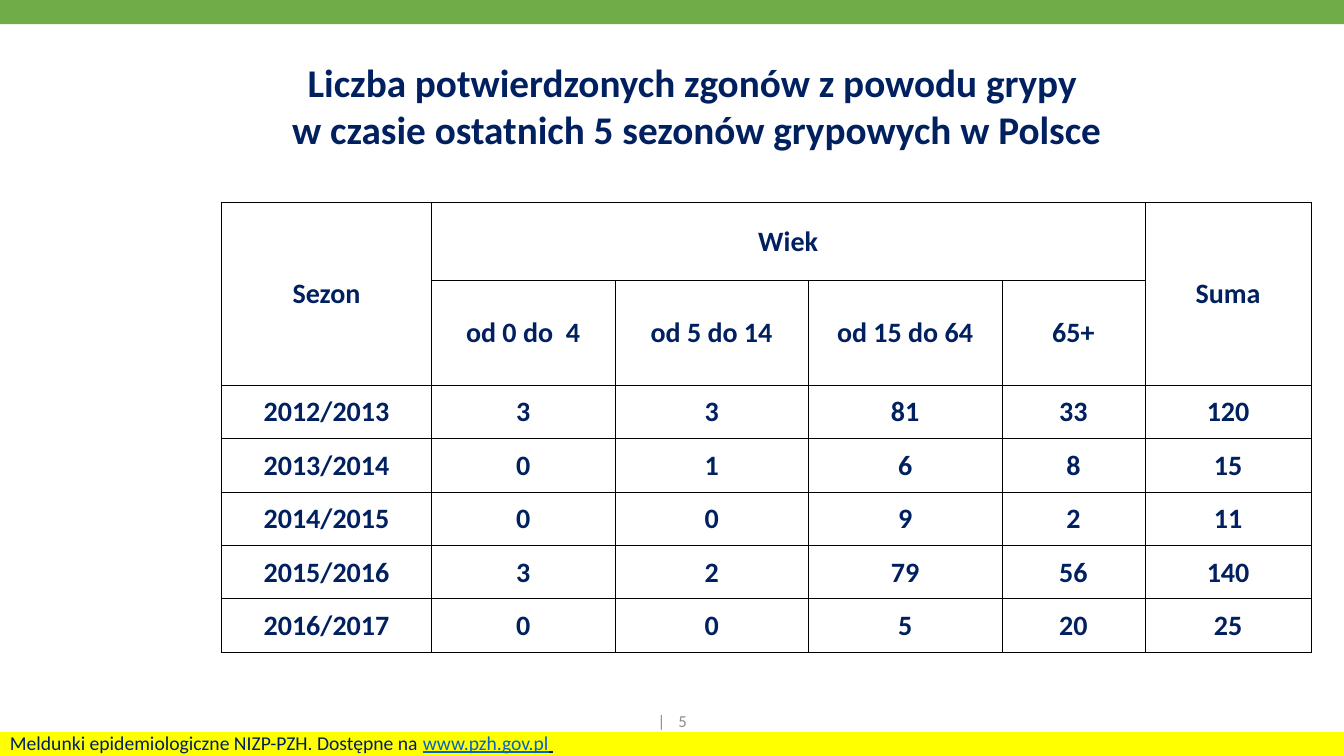
from dataclasses import dataclass

from lxml import etree
from pptx import Presentation
from pptx import util as u
from pptx.dml.color import RGBColor
from pptx.enum import shapes, text
from pptx.oxml.ns import qn

SLIDE_WIDTH, SLIDE_HEIGHT = u.Inches(13.33), u.Inches(7.5)
NAVY, GREY, LINK_BLUE = "002060", "8C8C8C", "0563C1"
GREEN, YELLOW, BLACK = "70AD47", "FFFF00", "000000"


@dataclass(frozen=True)
class Area:
    """A rectangle in percent of the slide's width and height."""
    left: float
    top: float
    width: float
    height: float

    def lengths(self) -> tuple[int, int, int, int]:
        return across(self.left), down(self.top), across(self.width), down(self.height)


@dataclass(frozen=True)
class Band:
    area: Area
    color: str


BANDS = [Band(Area(0, 0, 100, 3.2), GREEN), Band(Area(0, 96.8, 100, 3.2), YELLOW)]
TITLE_AREA = Area(6.82, 9.2, 90, 12.27)
PAGE_AREA = Area(33.15, 92.67, 33.75, 5.33)
SOURCE_AREA = Area(0, 96, 57.9, 4.53)

# Table: column widths and row heights in percent of the slide
TABLE_LEFT, TABLE_TOP = 16.5, 26.8
COLUMN_WIDTHS = [15.6, 13.65, 14.4, 14.4, 10.65, 12.38]
ROW_HEIGHTS = [10.27, 13.87] + [7.07] * 5
DEATHS = [
    ["Sezon", "Wiek", "", "", "", "Suma"],
    ["", "od 0 do  4", "od 5 do 14", "od 15 do 64", "65+", ""],
    ["2012/2013", "3", "3", "81", "33", "120"],
    ["2013/2014", "0", "1", "6", "8", "15"],
    ["2014/2015", "0", "0", "9", "2", "11"],
    ["2015/2016", "3", "2", "79", "56", "140"],
    ["2016/2017", "0", "0", "5", "20", "25"],
]
MERGES = [((0, 0), (1, 0)), ((0, 1), (0, 4)), ((0, 5), (1, 5))]


def across(percent: float) -> int:
    return round(SLIDE_WIDTH * percent / 100)


def down(percent: float) -> int:
    return round(SLIDE_HEIGHT * percent / 100)


def rgb(color: str) -> RGBColor:
    return RGBColor.from_string(color)


def write(paragraph, wording: str, *, size: float, color: str = NAVY, bold: bool = False,
          underline: bool = False, centered: bool = False, tracking: int = 0) -> None:
    """Append one formatted run; tracking is in hundredths of a point."""
    if centered:
        paragraph.alignment = text.PP_ALIGN.CENTER
    run = paragraph.add_run()
    run.text = wording
    font = run.font
    font.name, font.size, font.bold, font.underline = "Calibri", u.Pt(size), bold, underline
    font.color.rgb = rgb(color)
    if tracking:
        run.font._element.set("spc", str(tracking))


def add_band(slide, band: Band) -> None:
    shape = slide.shapes.add_shape(shapes.MSO_SHAPE.RECTANGLE, *band.area.lengths())
    shape.shadow.inherit = False
    shape.fill.solid()
    shape.fill.fore_color.rgb = rgb(band.color)
    shape.line.fill.background()


def add_text_frame(slide, area: Area, anchor):
    frame = slide.shapes.add_textbox(*area.lengths()).text_frame
    frame.word_wrap = True
    frame.vertical_anchor = anchor
    return frame


def add_title(slide) -> None:
    title = slide.shapes.title
    title.left, title.top, title.width, title.height = TITLE_AREA.lengths()
    frame = title.text_frame
    frame.auto_size = text.MSO_AUTO_SIZE.NONE
    frame.vertical_anchor = text.MSO_ANCHOR.MIDDLE
    frame.margin_bottom = u.Inches(0.26)
    first, second = frame.paragraphs[0], frame.add_paragraph()
    write(first, "Liczba potwierdzonych zgonów z powodu grypy ", size=28, bold=True, centered=True)
    write(second, "w czasie ostatnich 5 sezonów grypowych w Polsce", size=28, bold=True,
          centered=True)


def outline_cell(cell) -> None:
    properties = cell._tc.get_or_add_tcPr()
    for side in ("a:lnL", "a:lnR", "a:lnT", "a:lnB"):
        line = etree.SubElement(properties, qn(side), w=str(u.Pt(0.5)))
        fill = etree.SubElement(line, qn("a:solidFill"))
        etree.SubElement(fill, qn("a:srgbClr"), val=BLACK)


def add_deaths_table(slide) -> None:
    area = Area(TABLE_LEFT, TABLE_TOP, sum(COLUMN_WIDTHS), sum(ROW_HEIGHTS))
    table = slide.shapes.add_table(len(DEATHS), len(COLUMN_WIDTHS), *area.lengths()).table
    table.first_row = table.horz_banding = False
    for column, width in zip(table.columns, COLUMN_WIDTHS):
        column.width = across(width)
    for row, height in zip(table.rows, ROW_HEIGHTS):
        row.height = down(height)
    for row, values in zip(table.rows, DEATHS):
        for cell, value in zip(row.cells, values):
            outline_cell(cell)
            cell.fill.background()
            cell.vertical_anchor = text.MSO_ANCHOR.MIDDLE
            cell.margin_left = cell.margin_right = cell.margin_top = u.Inches(0.01)
            cell.margin_bottom = 0
            if value:
                write(cell.text_frame.paragraphs[0], value, size=20, bold=True, centered=True)
    for start, end in MERGES:
        table.cell(*start).merge(table.cell(*end))


def main() -> None:
    presentation = Presentation()
    presentation.slide_width, presentation.slide_height = SLIDE_WIDTH, SLIDE_HEIGHT
    slide = presentation.slides.add_slide(presentation.slide_layouts.get_by_name("Title Only"))

    # Coloured bands along the top and bottom edges
    for band in BANDS:
        add_band(slide, band)

    # Page number
    page = add_text_frame(slide, PAGE_AREA, text.MSO_ANCHOR.MIDDLE).paragraphs[0]
    write(page, "| ", size=12, color=GREY, centered=True, tracking=325)
    write(page, "5", size=12, color=GREY, centered=True)

    # Main content
    add_deaths_table(slide)
    add_title(slide)

    # Source line
    source = add_text_frame(slide, SOURCE_AREA, text.MSO_ANCHOR.TOP).paragraphs[0]
    write(source, "Meldunki epidemiologiczne NIZP-PZH. Dostępne na ", size=14)
    write(source, "www.pzh.gov.pl", size=14, color=LINK_BLUE, underline=True)
    write(source, " ", size=14, underline=True)

    presentation.save("out.pptx")


if __name__ == "__main__":
    main()
